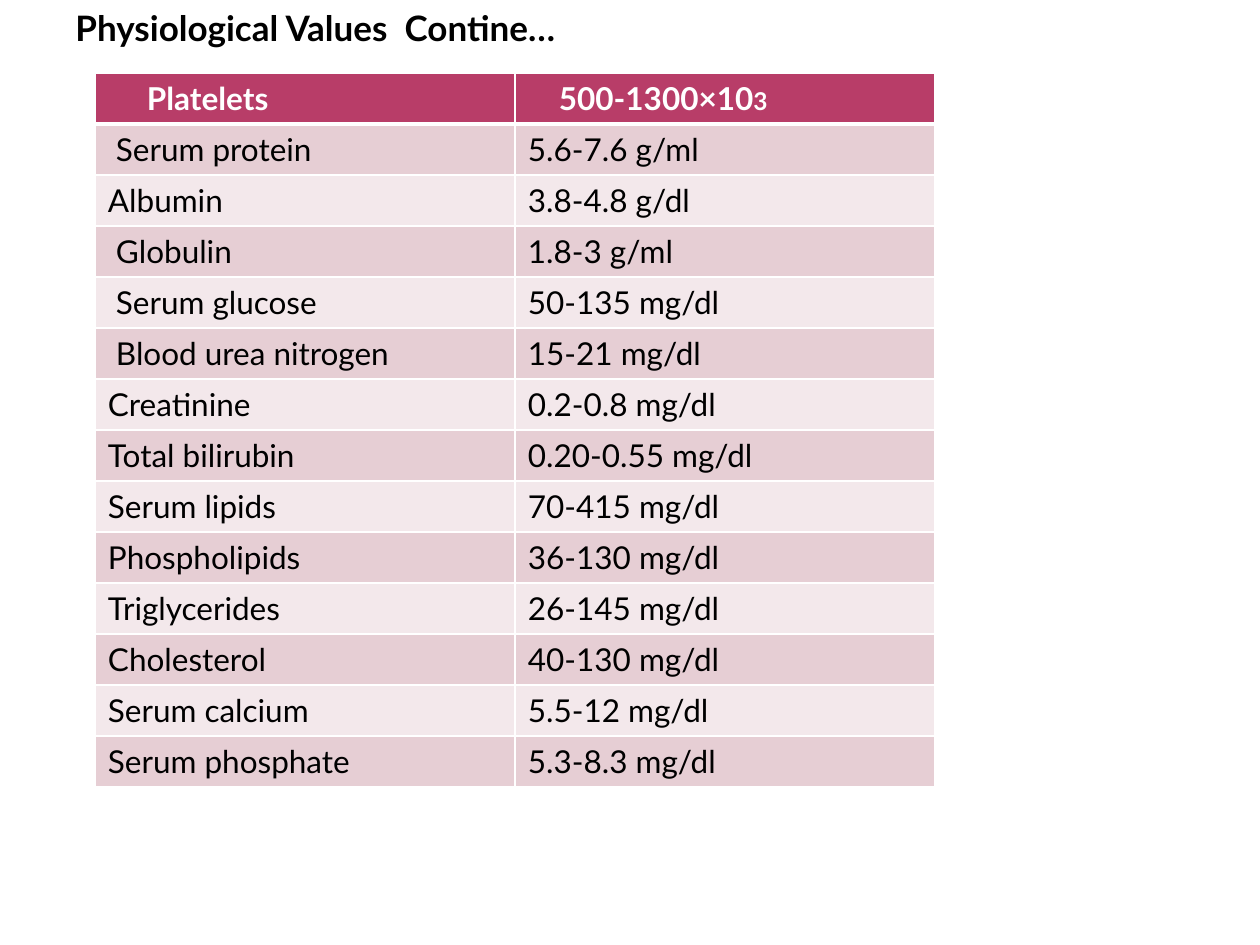
"""Build a slide with a table of physiological blood values."""
from dataclasses import dataclass

from lxml import etree
from pptx import Presentation
from pptx.dml.color import RGBColor
from pptx.enum.text import PP_ALIGN
from pptx.oxml.ns import qn
from pptx.util import Emu, Pt

CENTER = PP_ALIGN.CENTER
PX = 914400 // 126

TITLE = "Physiological Values  Contine…"
HEADER = [("Platelets", 39), ("500-1300×10", 31)]
EXPONENT = "3"
VALUES = [
    ("Serum protein", "5.6-7.6 g/ml"),
    ("Albumin", "3.8-4.8 g/dl"),
    ("Globulin", "1.8-3 g/ml"),
    ("Serum glucose", "50-135 mg/dl"),
    ("Blood urea nitrogen", "15-21 mg/dl"),
    ("Creatinine", "0.2-0.8 mg/dl"),
    ("Total bilirubin", "0.20-0.55 mg/dl"),
    ("Serum lipids", "70-415 mg/dl"),
    ("Phospholipids", "36-130 mg/dl"),
    ("Triglycerides", "26-145 mg/dl"),
    ("Cholesterol", "40-130 mg/dl"),
    ("Serum calcium", "5.5-12 mg/dl"),
    ("Serum phosphate", "5.3-8.3 mg/dl"),
]
INDENTED = {"Serum protein", "Globulin", "Serum glucose", "Blood urea nitrogen"}
INDENT = 8
CELL_MARGIN = 13
TITLE_BOX = (-220, 0, 1071, 97)
TABLE_LEFT, TABLE_TOP, COL_W, ROW_H = 95, 73, 420, 51


@dataclass(frozen=True)
class Theme:
    font: str = "Lato"
    title: int = 20
    body: int = 18
    exponent: int = 14
    ink: str = "000000"
    white: str = "FFFFFF"
    header: str = "B83D68"
    bands: tuple = ("E6CED4", "F3E8EB")
    rule: int = 1
    header_rule: int = 3


THEME = Theme()


def px(n):
    return Emu(n * PX)


def style(p, size, color, bold):
    for r in p.runs:
        r.font.name = THEME.font
        r.font.size = Pt(size)
        r.font.bold = bold
        r.font.color.rgb = RGBColor.from_string(color)


def set_borders(cell, top, bottom):
    tc_pr = cell._tc.get_or_add_tcPr()
    widths = {"L": THEME.rule, "R": THEME.rule, "T": top, "B": bottom}
    for side, width in widths.items():
        ln = etree.SubElement(tc_pr, qn(f"a:ln{side}"), w=str(Pt(width)))
        fill = etree.SubElement(ln, qn("a:solidFill"))
        etree.SubElement(fill, qn("a:srgbClr"), val=THEME.white)


def fill_cell(cell, row, text, indent):
    is_header = row == 0
    top = THEME.header_rule if row == 1 else THEME.rule
    bottom = THEME.header_rule if is_header else THEME.rule
    set_borders(cell, top, bottom)
    cell.fill.solid()
    color = THEME.header if is_header else THEME.bands[(row - 1) % 2]
    cell.fill.fore_color.rgb = RGBColor.from_string(color)
    cell.margin_left = px(CELL_MARGIN + indent)
    p = cell.text_frame.paragraphs[0]
    p.text = text
    style(p, THEME.body, THEME.white if is_header else THEME.ink, is_header)


def add_title(s):
    tf = s.shapes.add_textbox(*map(px, TITLE_BOX)).text_frame
    tf.word_wrap = True
    p = tf.paragraphs[0]
    p.text = TITLE
    p.alignment = CENTER
    style(p, THEME.title, THEME.ink, True)


def add_values(s):
    body = [[(t, INDENT if t in INDENTED else 0) for t in pair] for pair in VALUES]
    rows = [HEADER] + body
    n_cols = len(HEADER)
    table = s.shapes.add_table(
        len(rows), n_cols, px(TABLE_LEFT), px(TABLE_TOP),
        px(COL_W * n_cols), px(ROW_H * len(rows)),
    ).table
    for col in table.columns:
        col.width = px(COL_W)
    for i, row in enumerate(rows):
        table.rows[i].height = px(ROW_H)
        for j, (text, indent) in enumerate(row):
            fill_cell(table.cell(i, j), i, text, indent)
    p = table.cell(0, 1).text_frame.paragraphs[0]
    r = p.add_run()
    r.text = EXPONENT
    style(p, THEME.body, THEME.white, True)
    r.font.size = Pt(THEME.exponent)


def main():
    prs = Presentation()
    prs.slide_width, prs.slide_height = px(1260), px(945)
    s = prs.slides.add_slide(prs.slide_layouts[6])
    add_title(s)
    add_values(s)
    prs.save("out.pptx")


if __name__ == "__main__":
    main()
